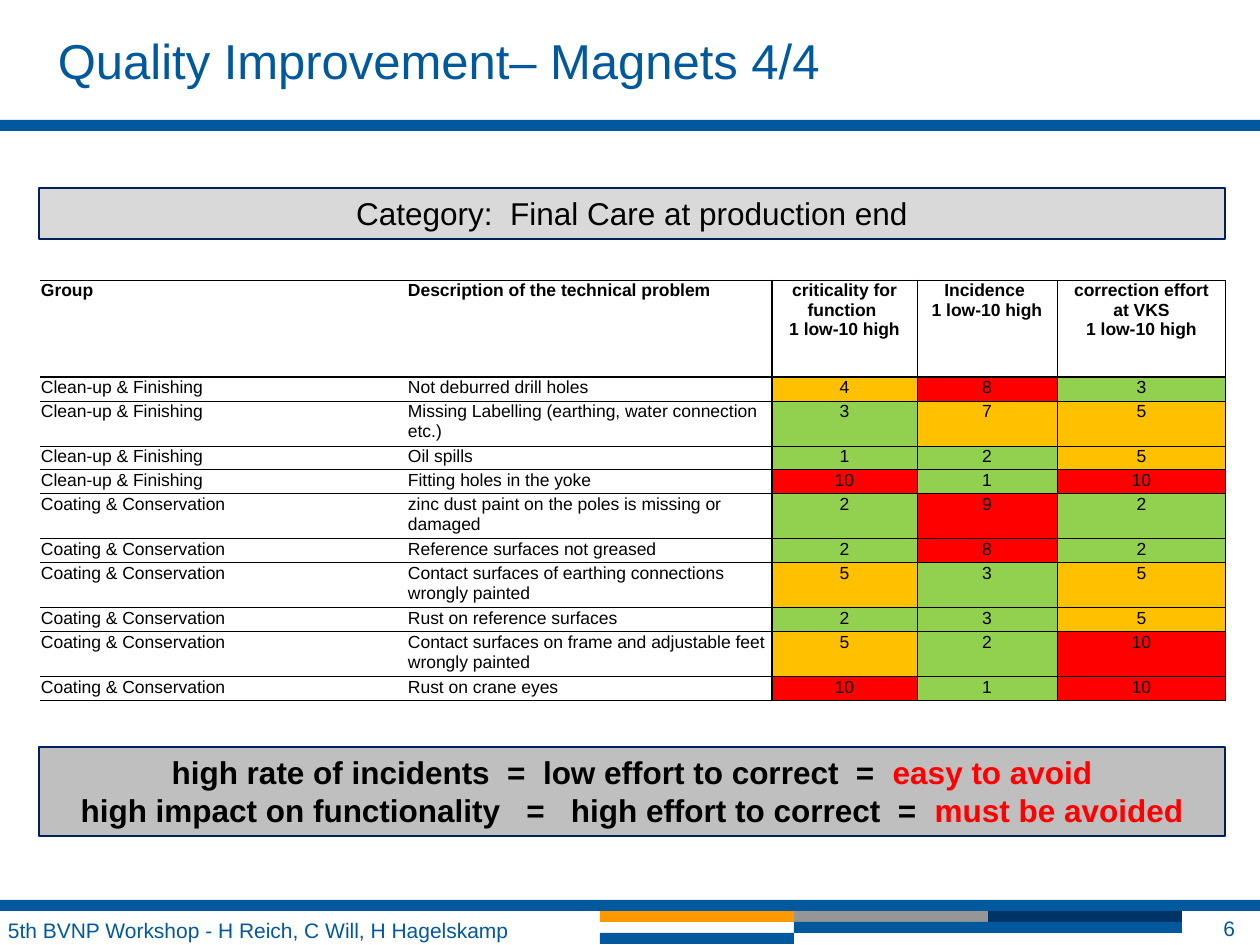
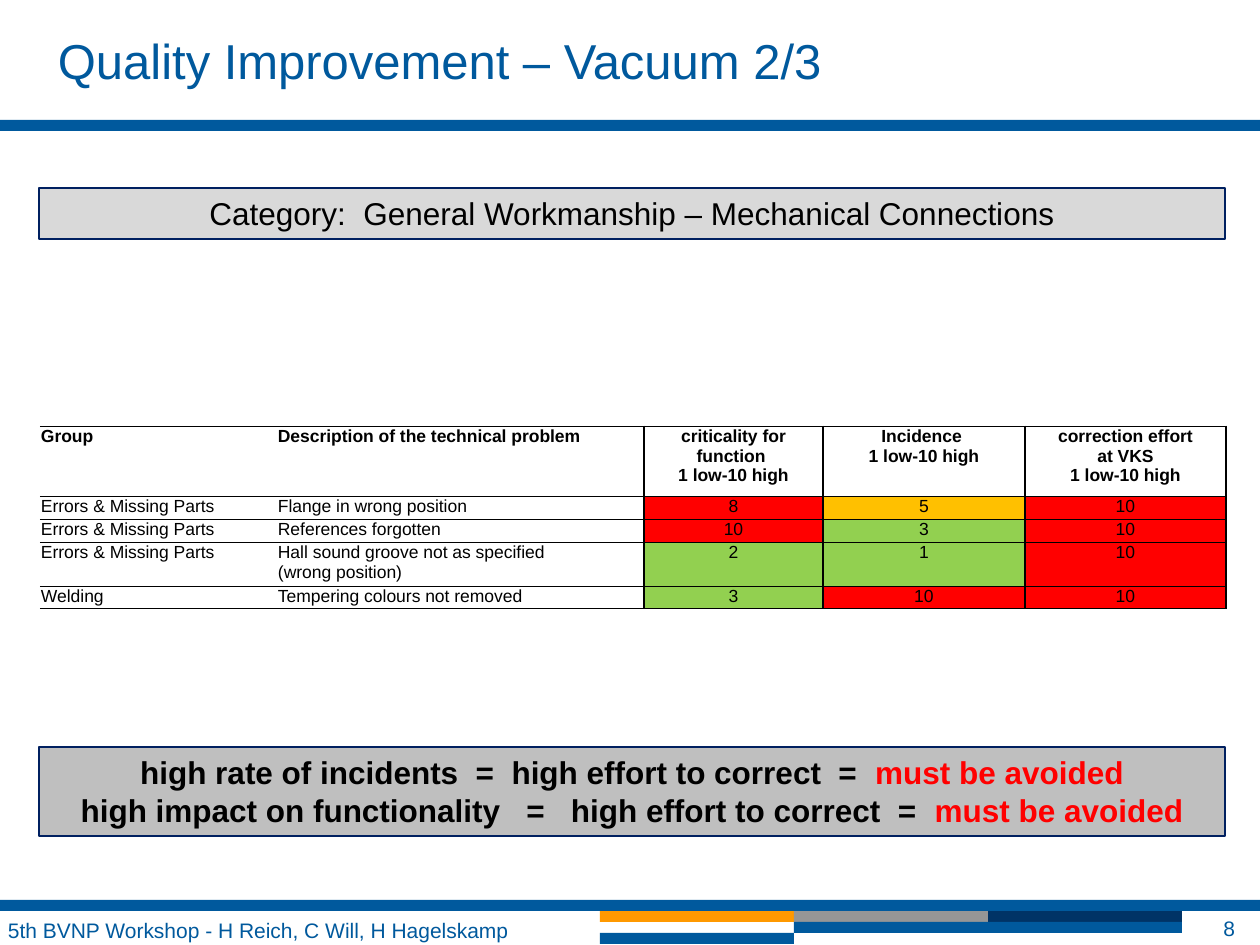
from dataclasses import dataclass

from lxml.etree import SubElement
from pptx import Presentation
from pptx.dml.color import RGBColor
from pptx.enum.shapes import MSO_SHAPE
from pptx.enum.text import MSO_ANCHOR as Anchor, MSO_AUTO_SIZE as AutoSize, PP_ALIGN as Align
from pptx.oxml.ns import qn
from pptx.util import Emu, Pt

PX_PER_INCH = 126
NO_GRID_STYLE = "{2D5ABB26-0587-4C30-8999-92F81FD0307C}"


@dataclass(frozen=True)
class Theme:
    font: str = "Arial"
    blue: str = "00599D"
    navy: str = "003366"
    orange: str = "FF9900"
    grey: str = "969696"
    outline: str = "002060"
    category_fill: str = "D9D9D9"
    verdict_fill: str = "BFBFBF"
    ink: str = "000000"
    low: str = "92D050"
    medium: str = "FFC000"
    high: str = "FF0000"
    title_size: int = 28
    panel_size: int = 18
    footer_size: int = 12
    table_size: int = 10


THEME = Theme()

FOOTER = "5th BVNP Workshop - H Reich, C Will, H Hagelskamp"
HEADINGS = (
    "Group",
    "Description of the technical problem",
    "criticality for function \n1 low-10 high",
    "Incidence \n1 low-10 high",
    "correction effort\n at VKS \n1 low-10 high",
)
IMPACT_VERDICT = ("high impact on functionality   =   high effort to correct  =  ", "must be avoided")
CLEAN_UP = "Clean-up & Finishing"
COATING = "Coating & Conservation"
ERRORS = "Errors & Missing Parts"

REVIEWS = [
    {
        "title": "Quality Improvement– Magnets 4/4",
        "page": "6",
        "category": "Category:  Final Care at production end",
        "problems": [
            (CLEAN_UP, "Not deburred drill holes", 4, 8, 3),
            (CLEAN_UP, "Missing Labelling (earthing, water connection etc.)", 3, 7, 5),
            (CLEAN_UP, "Oil spills", 1, 2, 5),
            (CLEAN_UP, "Fitting holes in the yoke", 10, 1, 10),
            (COATING, "zinc dust paint on the poles is missing or damaged", 2, 9, 2),
            (COATING, "Reference surfaces not greased", 2, 8, 2),
            (COATING, "Contact surfaces of earthing connections wrongly painted", 5, 3, 5),
            (COATING, "Rust on reference surfaces", 2, 3, 5),
            (COATING, "Contact surfaces on frame and adjustable feet wrongly painted", 5, 2, 10),
            (COATING, "Rust on crane eyes", 10, 1, 10),
        ],
        "verdicts": [
            ("high rate of incidents  =  low effort to correct  =  ", "easy to avoid"),
            IMPACT_VERDICT,
        ],
        "top": 280,
        "columns": (367, 365, 145, 140, 169),
        "heights": {"header": 97, "one_line": 24, "two_lines": 45},
        "rules": {"header": 1, "divider": 1.5, "score": 0.5},
    },
    {
        "title": "Quality Improvement – Vacuum 2/3",
        "page": "8",
        "category": "Category:  General Workmanship – Mechanical Connections",
        "problems": [
            (ERRORS, "Flange in wrong position", 8, 5, 10),
            (ERRORS, "References forgotten", 10, 3, 10),
            (ERRORS, "Hall sound groove not as specified \n(wrong position)", 2, 1, 10),
            ("Welding", "Tempering colours not removed", 3, 10, 10),
        ],
        "verdicts": [
            ("high rate of incidents  =  high effort to correct  =  ", "must be avoided"),
            IMPACT_VERDICT,
        ],
        "top": 426,
        "columns": (237, 367, 179, 202, 201),
        "heights": {"header": 70, "one_line": 23, "two_lines": 44},
        "rules": {"header": 0.5, "divider": 1, "score": 1},
    },
]

SLIDE_WIDTH, SLIDE_HEIGHT = 1260, 945
CONTENT_LEFT, CONTENT_WIDTH = 39, 1186
TITLE_BAND_TOP = 120
BAND_HEIGHT = 11
FOOTER_TOP = 911
STRIPE_LEFT, STRIPE_WIDTH = 600, 194
# Footer stripes: column, row, columns spanned, colour
STRIPES = [
    (0, 0, 1, THEME.orange),
    (1, 0, 1, THEME.grey),
    (2, 0, 1, THEME.navy),
    (1, 1, 2, THEME.blue),
    (0, 2, 1, THEME.blue),
]
RULE_WIDTH = 0.5
FIRST_SCORE_COLUMN = 2
ONE_LINE_CHARS = 40


def px(length):
    return Emu(round(length * 914400 / PX_PER_INCH))


def rgb(colour):
    return RGBColor.from_string(colour)


def add_run(paragraph, text, size, colour, bold=False):
    """Add text as runs, with a line break at each newline."""
    for number, line in enumerate(text.split("\n")):
        if number:
            paragraph.add_line_break()
        run = paragraph.add_run()
        run.text = line
        run.font.name = THEME.font
        run.font.size = Pt(size)
        run.font.bold = bold
        run.font.color.rgb = rgb(colour)


def add_box(slide, left, top, width, height, fill, outline_width=0):
    box = slide.shapes.add_shape(MSO_SHAPE.RECTANGLE, px(left), px(top), px(width), px(height))
    box.shadow.inherit = False
    box.fill.solid()
    box.fill.fore_color.rgb = rgb(fill)
    if outline_width:
        box.line.color.rgb = rgb(THEME.outline)
        box.line.width = Pt(outline_width)
    else:
        box.line.fill.background()
    return box


def add_panel(slide, top, height, fill, outline_width, lines, bold=False):
    """Add a full-width outlined box; each line is a list of (text, colour)."""
    panel = add_box(slide, CONTENT_LEFT, top, CONTENT_WIDTH, height, fill, outline_width)
    frame = panel.text_frame
    frame.word_wrap = True
    frame.auto_size = AutoSize.SHAPE_TO_FIT_TEXT
    frame.vertical_anchor = Anchor.TOP
    for number, line in enumerate(lines):
        paragraph = frame.add_paragraph() if number else frame.paragraphs[0]
        paragraph.alignment = Align.CENTER
        for text, colour in line:
            add_run(paragraph, text, THEME.panel_size, colour, bold)


def add_label(slide, left, top, width, height, text, size,
              margins=(13, 6), anchor=Anchor.TOP, align=Align.LEFT):
    """Add a blue text box; margins are (sides, top and bottom)."""
    label = slide.shapes.add_textbox(px(left), px(top), px(width), px(height))
    frame = label.text_frame
    frame.word_wrap = True
    frame.vertical_anchor = anchor
    frame.margin_left = frame.margin_right = px(margins[0])
    frame.margin_top = frame.margin_bottom = px(margins[1])
    frame.paragraphs[0].alignment = align
    add_run(frame.paragraphs[0], text, size, THEME.blue)


def add_page_frame(slide, title, page):
    for column, row, span, colour in STRIPES:
        add_box(slide, STRIPE_LEFT + column * STRIPE_WIDTH, FOOTER_TOP + row * BAND_HEIGHT,
                span * STRIPE_WIDTH, BAND_HEIGHT, colour)
    for top in (FOOTER_TOP - BAND_HEIGHT, TITLE_BAND_TOP):
        add_box(slide, 0, top, SLIDE_WIDTH, BAND_HEIGHT, THEME.blue)
    add_label(slide, 58, 30, 1186, 54, title, THEME.title_size, margins=(0, 0))
    add_label(slide, -5, FOOTER_TOP, 605, 34, FOOTER, THEME.footer_size)
    add_label(slide, 1147, FOOTER_TOP, 101, 34, page, THEME.footer_size,
              margins=(13, 0), anchor=Anchor.MIDDLE, align=Align.RIGHT)


def set_borders(cell, widths):
    """Draw left, right, top and bottom borders; a width of 0 leaves one out."""
    properties = cell._tc.get_or_add_tcPr()
    for side, width in zip("LRTB", widths):
        line = SubElement(properties, qn(f"a:ln{side}"), w=str(Pt(width)))
        if width:
            fill = SubElement(line, qn("a:solidFill"))
            SubElement(fill, qn("a:srgbClr"), val=THEME.ink)
        else:
            SubElement(line, qn("a:noFill"))


def score_colour(score):
    if score <= 3:
        return THEME.low
    return THEME.medium if score <= 7 else THEME.high


def add_problem_table(slide, review):
    rows = [HEADINGS, *review["problems"]]
    columns, heights, rules = review["columns"], review["heights"], review["rules"]
    row_heights = [heights["header"]] + [
        heights["two_lines" if len(problem[1]) > ONE_LINE_CHARS else "one_line"]
        for problem in review["problems"]
    ]
    # Vertical rules, one at each column edge
    edges = [0, 0, rules["divider"]] + [rules["score"]] * 3
    levels = [RULE_WIDTH, rules["header"]] + [RULE_WIDTH] * len(review["problems"])

    table = slide.shapes.add_table(len(rows), len(columns), px(CONTENT_LEFT + 1), px(review["top"]),
                                   px(sum(columns)), px(sum(row_heights))).table
    table.first_row = table.horz_banding = False
    table._tbl.tblPr.find(qn("a:tableStyleId")).text = NO_GRID_STYLE
    for column, width in zip(table.columns, columns):
        column.width = px(width)
    for r, (entries, height) in enumerate(zip(rows, row_heights)):
        table.rows[r].height = px(height)
        for c, entry in enumerate(entries):
            cell = table.cell(r, c)
            cell.margin_left = cell.margin_right = cell.margin_top = px(1)
            cell.margin_bottom = 0
            set_borders(cell, (edges[c], edges[c + 1], levels[r], levels[r + 1]))
            is_score_column = c >= FIRST_SCORE_COLUMN
            if r and is_score_column:
                cell.fill.solid()
                cell.fill.fore_color.rgb = rgb(score_colour(entry))
            else:
                cell.fill.background()
            paragraph = cell.text_frame.paragraphs[0]
            paragraph.alignment = Align.CENTER if is_score_column else Align.LEFT
            add_run(paragraph, str(entry), THEME.table_size, THEME.ink, bold=r == 0)


def add_review_slide(deck, review):
    slide = deck.slides.add_slide(deck.slide_layouts[6])
    add_page_frame(slide, review["title"], review["page"])
    add_panel(slide, 188, 51, THEME.category_fill, 1.25, [[(review["category"], THEME.ink)]])
    add_problem_table(slide, review)
    verdict_lines = [[(finding, THEME.ink), (verdict, THEME.high)]
                     for finding, verdict in review["verdicts"]]
    add_panel(slide, 747, 89, THEME.verdict_fill, 1, verdict_lines, bold=True)


def main():
    deck = Presentation()
    deck.slide_width, deck.slide_height = px(SLIDE_WIDTH), px(SLIDE_HEIGHT)
    for review in REVIEWS:
        add_review_slide(deck, review)
    deck.save("out.pptx")


if __name__ == "__main__":
    main()
